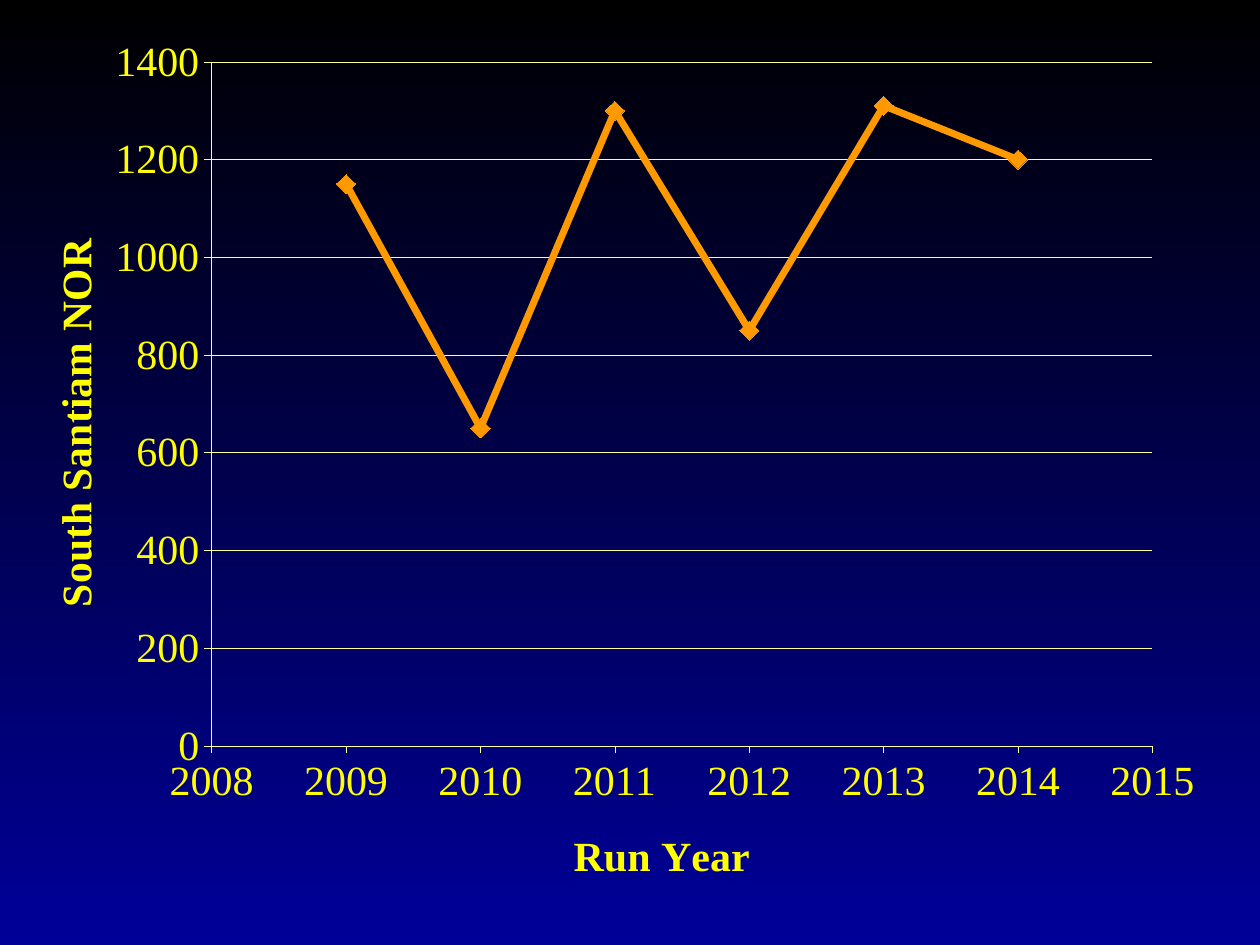
from lxml import etree
from pptx import Presentation
from pptx.chart.data import XyChartData
from pptx.dml.color import RGBColor
from pptx.enum.chart import XL_CHART_TYPE, XL_MARKER_STYLE, XL_TICK_MARK
from pptx.oxml.ns import qn
from pptx.util import Inches, Pt

COLORS = {"top": "000000", "bottom": "000099", "text": "FFFF00",
          "axis": "FFFF99", "line": "FF9900"}
FONT = "Times New Roman"


def set_text(tf, text, size=24, bold=True, color="text"):
    r = tf.paragraphs[0].add_run()
    r.text = text
    r.font.name = FONT
    r.font.size = Pt(size)
    r.font.bold = bold
    r.font.color.rgb = RGBColor.from_string(COLORS[color])


def add_layout(parent, index, **values):
    for old in parent.findall(qn("c:layout")):
        parent.remove(old)
    layout = etree.Element(qn("c:layout"))
    manual = etree.SubElement(layout, qn("c:manualLayout"))
    for tag, value in values.items():
        etree.SubElement(manual, qn(f"c:{tag}")).set("val", str(value))
    parent.insert(index, layout)


prs = Presentation()
prs.slide_width, prs.slide_height = Inches(10), Inches(7.5)
s = prs.slides.add_slide(prs.slide_layouts[6])

fill = s.background.fill
fill.gradient()
fill.gradient_angle = 270
for stop, name, position in zip(fill.gradient_stops, ("top", "bottom"), (0, 1)):
    stop.color.rgb = RGBColor.from_string(COLORS[name])
    stop.position = position

data = XyChartData()
returns = data.add_series("South Santiam NOR")
for year, count in enumerate((1150, 650, 1300, 850, 1310, 1200), start=2009):
    returns.add_data_point(year, count)

chart = s.shapes.add_chart(XL_CHART_TYPE.XY_SCATTER_LINES, Inches(0.17), Inches(0.17),
                           Inches(9.5), Inches(6.92), data).chart
chart.has_legend = False
chart.has_title = False
chart.font.name = FONT
chart.font.size = Pt(24)
chart.font.color.rgb = RGBColor.from_string(COLORS["text"])

axes = (
    (chart.category_axis, "Run Year", 2008, 2015, 1, False, 0.455, 0.93),
    (chart.value_axis, "South Santiam NOR", 0, 1400, 200, True, 0.016, 0.249),
)
for axis, title, low, high, step, grid, x, y in axes:
    axis.minimum_scale, axis.maximum_scale, axis.major_unit = low, high, step
    axis.major_tick_mark = XL_TICK_MARK.OUTSIDE
    axis.minor_tick_mark = XL_TICK_MARK.NONE
    axis.tick_labels.number_format = "General"
    axis.tick_labels.number_format_is_linked = False
    axis.has_major_gridlines = grid
    lines = [axis.format.line]
    if grid:
        lines.append(axis.major_gridlines.format.line)
    for line in lines:
        line.color.rgb = RGBColor.from_string(COLORS["axis"])
        line.width = Pt(0.25)
    set_text(axis.axis_title.text_frame, title)
    add_layout(axis.axis_title.text_frame._txBody.getparent().getparent(), 1,
               xMode="edge", yMode="edge", x=x, y=y)

plot = chart.plots[0]
plot.vary_by_categories = False
series = plot.series[0]
series.smooth = False
series.format.line.color.rgb = RGBColor.from_string(COLORS["line"])
series.format.line.width = Pt(4)
series.marker.style = XL_MARKER_STYLE.DIAMOND
series.marker.size = 11
series.marker.format.fill.solid()
series.marker.format.fill.fore_color.rgb = RGBColor.from_string(COLORS["line"])
series.marker.format.line.color.rgb = RGBColor.from_string(COLORS["line"])

plot_area = chart.element.find(".//" + qn("c:plotArea"))
add_layout(plot_area, 0, layoutTarget="inner", xMode="edge", yMode="edge",
           x=0.159, y=0.047, w=0.786, h=0.795)

prs.save("out.pptx")
